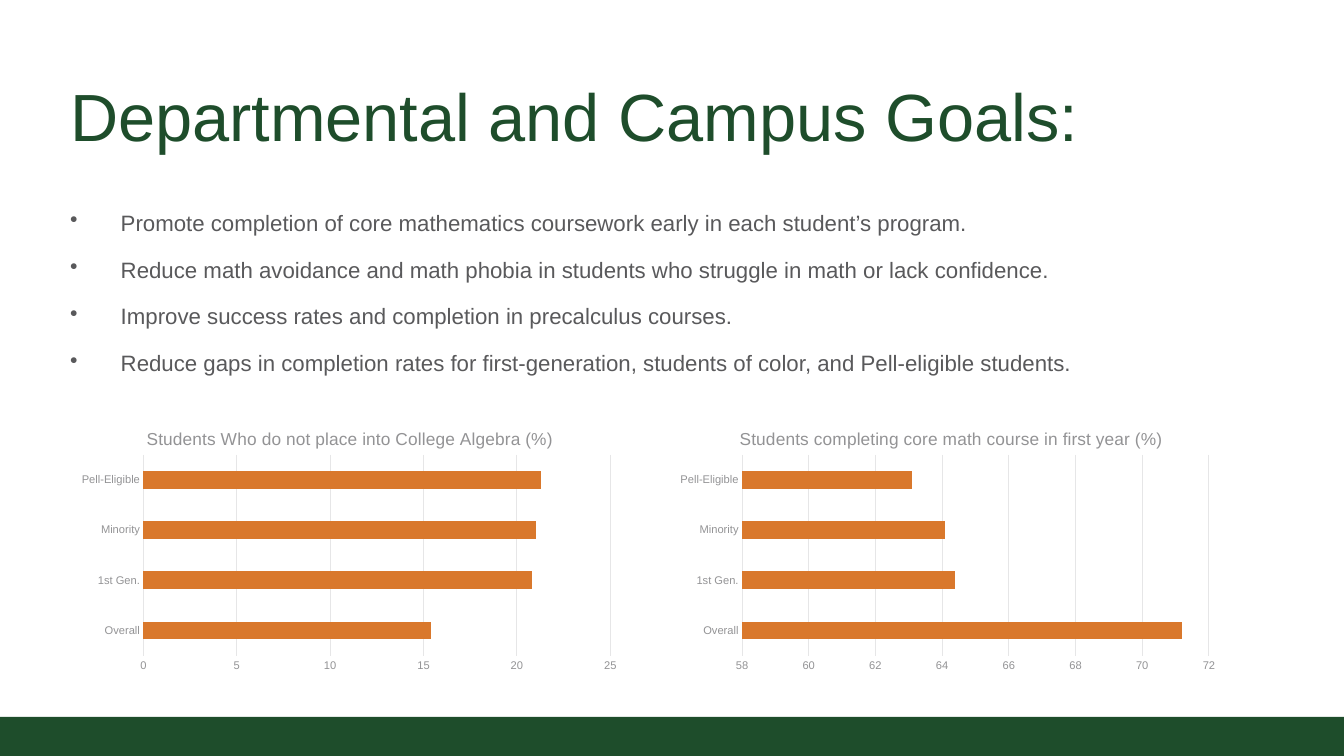
from lxml import etree
from pptx import Presentation
from pptx.chart import data as chart_data
from pptx.dml.color import RGBColor
from pptx.enum import chart as chart_enum, shapes, text
from pptx.oxml import parse_xml
from pptx.oxml.ns import nsdecls, qn
from pptx.util import Pt

COLORS = {
    "green": "1E4D2B",
    "body": "59595B",
    "label": "939395",
    "grid": "E6E6E7",
    "bar": "D9782C",
}
GOALS = [
    "Promote completion of core mathematics coursework early in each student’s program.",
    "Reduce math avoidance and math phobia in students who struggle in math or lack confidence.",
    "Improve success rates and completion in precalculus courses.",
    "Reduce gaps in completion rates for first-generation, students of color, "
    "and Pell-eligible students.",
]
GROUPS = ["Overall", "1st Gen.", "Minority", "Pell-Eligible"]
SLIDE_WIDTH, SLIDE_HEIGHT = 1088, 612
MARGIN, TEXT_WIDTH = 49.7, 989.3
BULLET_INDENT = 41


def color(name):
    return RGBColor.from_string(COLORS[name])


def style_font(font, size, color_name):
    font.name = "Arial"
    font.size = Pt(size)
    font.bold = False
    font.color.rgb = color(color_name)


def style_line(line, color_name):
    line.color.rgb = color(color_name)
    line.width = Pt(0.75)


def add_footer_band(slide):
    height = 31.7
    band = slide.shapes.add_shape(
        shapes.MSO_SHAPE.RECTANGLE,
        Pt(0), Pt(SLIDE_HEIGHT - height), Pt(SLIDE_WIDTH), Pt(height))
    band.shadow.inherit = False
    band.fill.solid()
    band.fill.fore_color.rgb = color("green")
    band.line.fill.background()


def add_text_frame(slide, top, height, anchor):
    box = slide.shapes.add_textbox(Pt(MARGIN), Pt(top), Pt(TEXT_WIDTH), Pt(height))
    frame = box.text_frame
    frame.word_wrap = True
    frame.vertical_anchor = anchor
    frame.margin_left = frame.margin_right = Pt(7.2)
    frame.margin_top = frame.margin_bottom = Pt(7.2)
    return frame


def add_title(slide, title):
    frame = add_text_frame(slide, 52.6, 79.9, text.MSO_ANCHOR.BOTTOM)
    frame.text = title
    style_font(frame.paragraphs[0].font, 54, "green")


def add_bullets(slide, items):
    frame = add_text_frame(slide, 157.7, 155.5, text.MSO_ANCHOR.TOP)
    frame.text = "\n".join(items)
    for index, para in enumerate(frame.paragraphs):
        para.line_spacing = 1.2
        para.space_before = Pt(6 if index else 0)
        para.space_after = Pt(6)
        properties = para._p.get_or_add_pPr()
        properties.set("marL", str(Pt(BULLET_INDENT)))
        properties.set("indent", str(-Pt(BULLET_INDENT)))
        etree.SubElement(properties, qn("a:buChar")).set("char", "•")
        style_font(para.font, 18, "body")


def manual_layout(x, y, size=None):
    """Build a layout from fractions of the chart's width and height."""
    settings = {"xMode": "edge", "yMode": "edge", "x": x, "y": y}
    if size:
        settings = {"layoutTarget": "inner", **settings, "w": size[0], "h": size[1]}
    items = "".join(f'<c:{tag} val="{value}"/>' for tag, value in settings.items())
    return parse_xml(
        f'<c:layout {nsdecls("c")}><c:manualLayout>{items}</c:manualLayout></c:layout>')


def set_layout(element, layout, position):
    for current in element.findall(qn("c:layout")):
        element.remove(current)
    element.insert(position, layout)


def add_bar_chart(slide, left, title, title_x, values, scale):
    """Scale holds the value axis minimum, maximum and step."""
    source = chart_data.CategoryChartData()
    source.categories = GROUPS
    source.add_series("Series 1", values)
    chart = slide.shapes.add_chart(
        chart_enum.XL_CHART_TYPE.BAR_CLUSTERED,
        Pt(left), Pt(332.6), Pt(450), Pt(216), source).chart
    style_font(chart.font, 10, "body")
    chart.has_legend = False

    chart.has_title = True
    chart.chart_title.include_in_layout = False
    frame = chart.chart_title.text_frame
    frame.text = title
    style_font(frame.paragraphs[0].font, 14, "label")
    set_layout(chart.chart_title._element, manual_layout(title_x, 0.05), 1)
    plot_area = chart._chartSpace.chart.plotArea
    set_layout(plot_area, manual_layout(0.13, 0.165, (0.84, 0.753)), 0)

    plot = chart.plots[0]
    plot.gap_width = 182
    plot.vary_by_categories = False
    bars = plot.series[0].format.fill
    bars.solid()
    bars.fore_color.rgb = color("bar")

    for axis in (chart.category_axis, chart.value_axis):
        axis.major_tick_mark = chart_enum.XL_TICK_MARK.NONE
        axis.minor_tick_mark = chart_enum.XL_TICK_MARK.NONE
        style_font(axis.tick_labels.font, 9, "label")
    style_line(chart.category_axis.format.line, "grid")
    value_axis = chart.value_axis
    value_axis.format.line.fill.background()
    value_axis.has_major_gridlines = True
    style_line(value_axis.major_gridlines.format.line, "grid")
    value_axis.minimum_scale, value_axis.maximum_scale, value_axis.major_unit = scale


def main():
    deck = Presentation()
    deck.slide_width, deck.slide_height = Pt(SLIDE_WIDTH), Pt(SLIDE_HEIGHT)
    slide = deck.slides.add_slide(deck.slide_layouts[6])
    add_footer_band(slide)
    add_title(slide, "Departmental and Campus Goals:")
    add_bullets(slide, GOALS)
    add_bar_chart(slide, 57.6, "Students Who do not place into College Algebra (%)", 0.13,
                  [15.4, 20.8, 21, 21.3], (0, 25, 5))
    add_bar_chart(slide, 542.2, "Students completing core math course in first year (%)", 0.12,
                  [71.2, 64.4, 64.1, 63.1], (58, 72, 2))
    deck.save("out.pptx")


if __name__ == "__main__":
    main()
